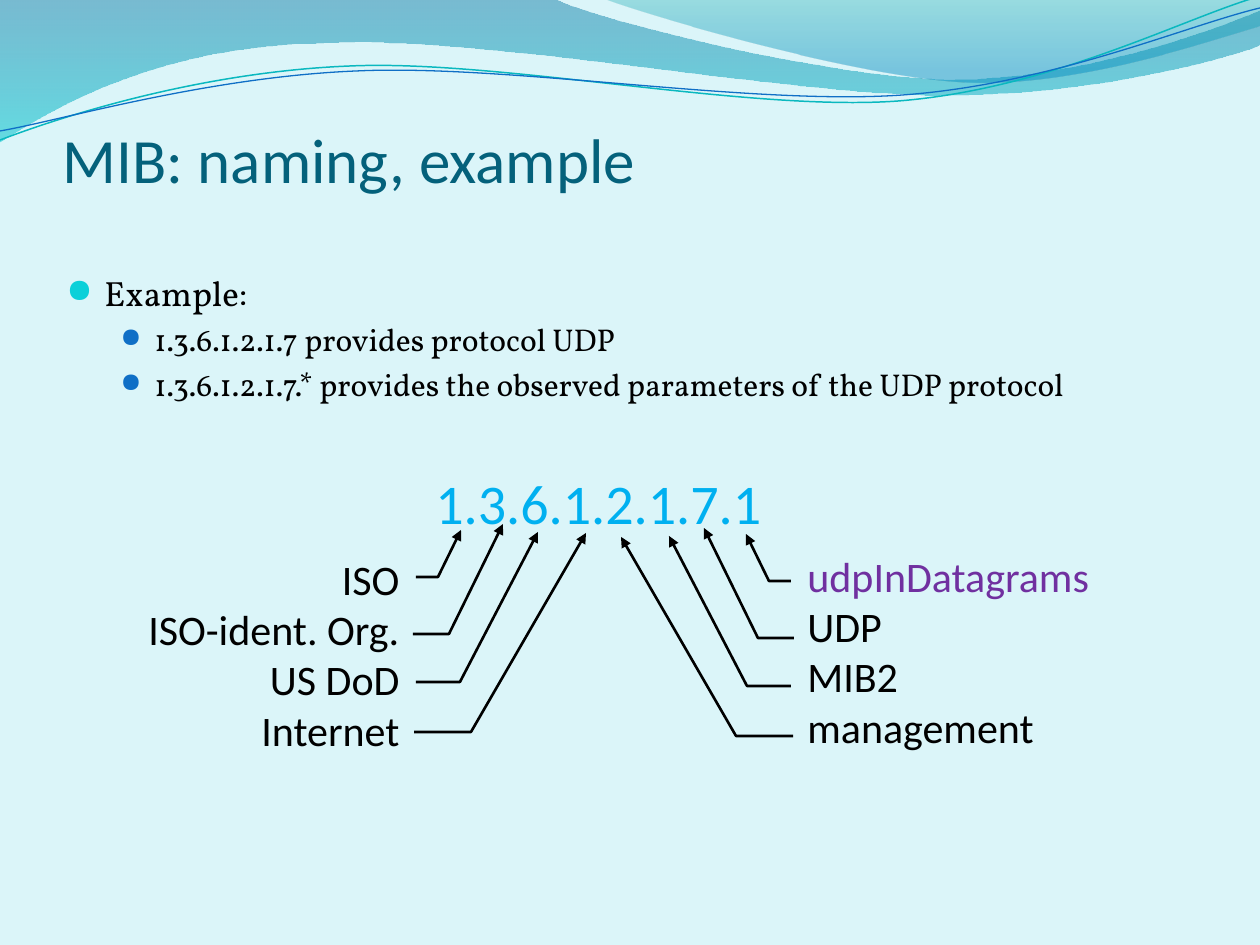
from lxml import etree
from pptx import Presentation, util as u
from pptx.dml.color import RGBColor
from pptx.enum import text
from pptx.oxml.ns import qn

PX = 914400 / 126
BLACK = "000000"
SANS, SERIF = "Calibri", "Vollkorn"

# Each wave starts at its first point; a step of one point is a line,
# a step of three points is a Bezier curve.
WAVE_BANDS = [
    ([(0, 0)],
     [[(554, -1)],
      [(600, 21), (837, 79), (955, 79)],
      [(1075, 79), (1207, 33), (1260, 11)],
      [(1261, 45)],
      [(1239, 55), (1096, 96), (940, 95)],
      [(784, 95), (481, 35), (324, 43)],
      [(163, 45), (58, 105), (-1, 142)]],
     [(0, "0074A1", 45), (1, "00C6CF", 55)]),
    ([(604, -1)],
     [[(641, 14), (859, 78), (969, 82)],
      [(1079, 86), (1211, 40), (1260, 26)],
      [(1260, 0)]],
     [(0, "00A1A9", 30), (0.8, "008BBF", 45)]),
]
WAVE_LINES = [
    ([(0, 140)],
     [[(60, 117), (199, 72), (349, 66)],
      [(498, 59), (747, 112), (898, 101)],
      [(1050, 89), (1182, 19), (1257, -3)]],
     "0AB8BF", 0.85),
    ([(0, 131)],
     [[(59, 121), (207, 77), (357, 71)],
      [(508, 64), (752, 106), (903, 95)],
      [(1053, 84), (1185, 26), (1260, 8)]],
     "0F6FC6", 0.75),
]
# Label end, bend and tip x; label y and tip y of the left pointers
POINTERS = [
    (416, 438, 461, 577, 530),
    (413, 449, 503, 634, 524),
    (416, 460, 538, 682, 532),
    (414, 471, 586, 732, 533),
]
MIRROR_SUM, RIGHT_DROP = 1207, 4


def px(n):
    return u.Emu(round(n * PX))


def rgb(value):
    return RGBColor.from_string(value)


def add_path(s, start, steps, closed=False):
    """Draw lines and Bezier curves given in page pixels."""
    points = [point for step in steps for point in step]
    builder = s.shapes.build_freeform(*start[0], scale=PX)
    builder.add_line_segments(points, close=closed)
    sp = builder.convert_to_shape()
    sp.shadow.inherit = False
    segments = iter(sp._element.xpath(".//a:lnTo"))
    for step in steps:
        nodes = [next(segments) for _ in step]
        if len(step) == 3:
            curve = etree.Element(qn("a:cubicBezTo"))
            nodes[0].addprevious(curve)
            for node in nodes:
                curve.append(node[0])
                node.getparent().remove(node)
    return sp


def set_line(sp, color, width):
    sp.fill.background()
    sp.line.color.rgb = rgb(color)
    sp.line.width = u.Pt(width)


def add_band(s, start, steps, stops):
    sp = add_path(s, start, steps, closed=True)
    sp.line.fill.background()
    sp.fill.gradient()
    sp.fill.gradient_angle = 270
    for stop, (position, color, _) in zip(sp.fill.gradient_stops, stops):
        stop.position = position
        stop.color.rgb = rgb(color)
    colors = sp._element.xpath(".//a:gs/a:srgbClr")
    for node, (_, _, opacity) in zip(colors, stops):
        etree.SubElement(node, qn("a:alpha"), val=str(opacity * 1000))


def add_pointer(s, points):
    sp = add_path(s, points[:1], [[point] for point in points[1:]])
    set_line(sp, BLACK, 1.5)
    etree.SubElement(sp.line._get_or_add_ln(), qn("a:tailEnd"), type="triangle")


def add_text(s, box, lines, size, color=BLACK, font=SANS, align=text.PP_ALIGN.LEFT, wrap=False):
    tf = s.shapes.add_textbox(*map(px, box)).text_frame
    tf.word_wrap = wrap
    if not wrap:
        tf.auto_size = text.MSO_AUTO_SIZE.SHAPE_TO_FIT_TEXT
    tf.text = "\n".join(lines)
    for p in tf.paragraphs:
        p.alignment = align
        p.font.size = u.Pt(size)
        p.font.name = font
        p.font.color.rgb = rgb(color)
    return tf


def set_bullet(p, indent, hanging, color, percent):
    pPr = p._p.get_or_add_pPr()
    pPr.set("marL", str(px(indent)))
    pPr.set("indent", str(-px(hanging)))
    p.space_before = u.Pt(4)
    bullet = [
        etree.Element(qn("a:buClr")),
        etree.Element(qn("a:buSzPct"), val=str(percent * 1000)),
        etree.Element(qn("a:buChar"), char="●"),
    ]
    etree.SubElement(bullet[0], qn("a:srgbClr"), val=color)
    spacing = pPr.find(qn("a:spcBef"))
    for node in reversed(bullet):
        spacing.addnext(node)


def add_body(s):
    lines = [
        "Example:",
        "1.3.6.1.2.1.7 provides protocol UDP",
        "1.3.6.1.2.1.7.* provides the observed parameters of the UDP protocol",
    ]
    tf = add_text(s, (54, 265, 1150, 586), lines, 18, font=SERIF, wrap=True)
    heading, *items = tf.paragraphs
    heading.font.size = u.Pt(20)
    set_bullet(heading, 38, 38, "0BD0D9", 95)
    for p in items:
        p.level = 1
        set_bullet(p, 88, 34, "0F6FC6", 85)


def add_title(s):
    tf = add_text(s, (63, 96, 1134, 100), ["MIB: naming, example"], 36, "04617B", wrap=True)
    tf.vertical_anchor = text.MSO_ANCHOR.BOTTOM
    tf.margin_left = tf.margin_right = tf.margin_bottom = 0


def add_identifier_diagram(s):
    add_text(s, (423, 462, 355, 81), ["1.3.6.1.2.1.7.1"], 32, "00B0F0")
    add_text(s, (134, 547, 278, 217), ["ISO", "ISO-ident. Org.", "US DoD", "Internet"], 24,
             align=text.PP_ALIGN.RIGHT)
    for label_x, bend_x, tip_x, label_y, tip_y in POINTERS:
        left = [(label_x, label_y), (bend_x, label_y), (tip_x, tip_y)]
        add_pointer(s, left)
        add_pointer(s, [(MIRROR_SUM - x, y + RIGHT_DROP) for x, y in left])
    tf = add_text(s, (795, 544, 310, 217), ["udpInDatagrams", "UDP", "MIB2", "management"], 24)
    tf.paragraphs[0].font.color.rgb = rgb("7030A0")


def main():
    prs = Presentation()
    prs.slide_width, prs.slide_height = px(1260), px(945)
    s = prs.slides.add_slide(prs.slide_layouts[6])
    s.background.fill.solid()
    s.background.fill.fore_color.rgb = rgb("DBF5F9")
    for start, steps, stops in WAVE_BANDS:
        add_band(s, start, steps, stops)
    for start, steps, color, width in WAVE_LINES:
        set_line(add_path(s, start, steps), color, width)
    add_body(s)
    add_title(s)
    add_identifier_diagram(s)
    prs.save("out.pptx")


if __name__ == "__main__":
    main()
